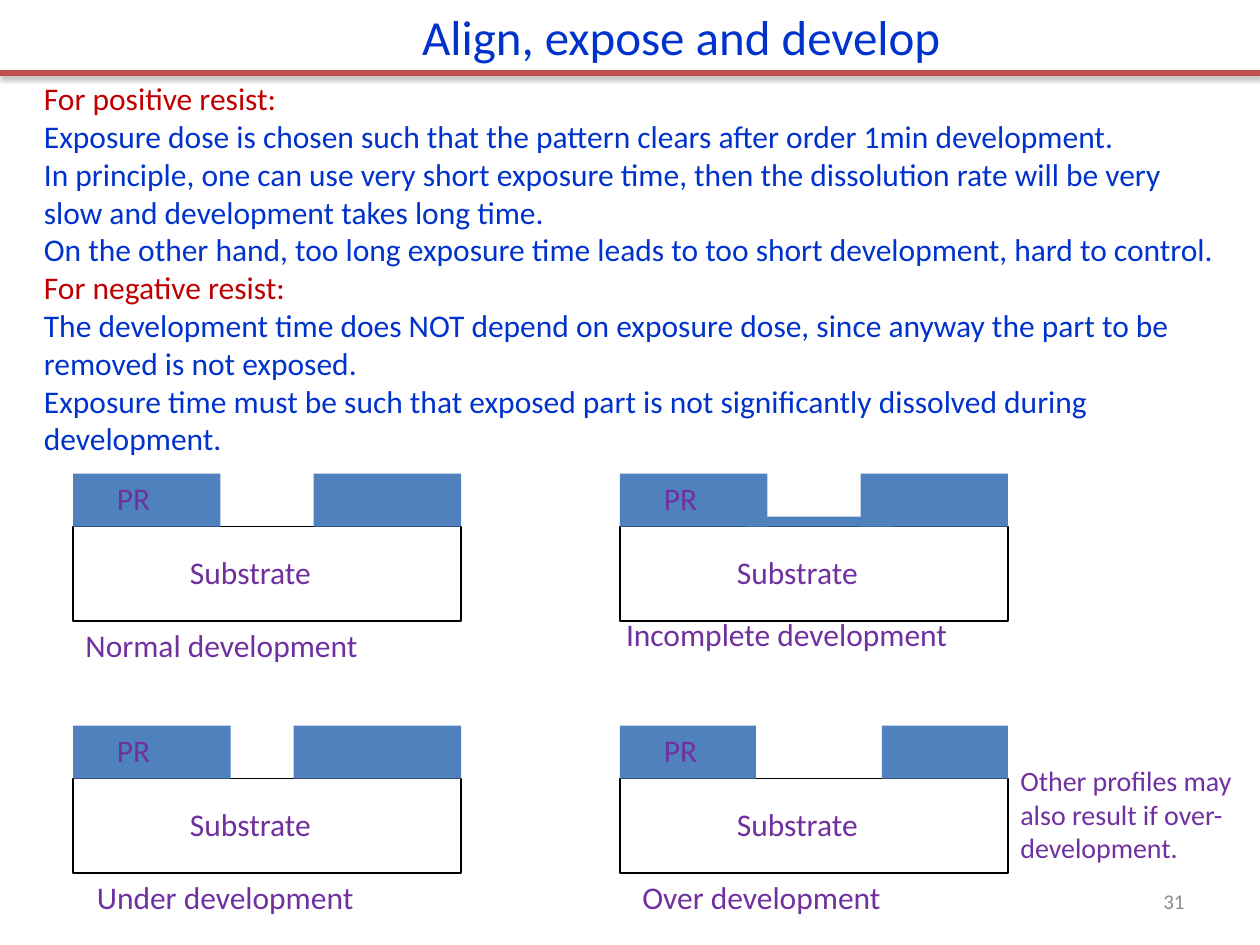
from lxml import etree
from pptx import Presentation, util as u
from pptx.dml.color import RGBColor
from pptx.enum import shapes, text
from pptx.oxml.ns import qn

BLUE = RGBColor(0x00, 0x33, 0xCC)
RED = RGBColor(0xC0, 0x00, 0x00)
PURPLE = RGBColor(0x70, 0x30, 0xA0)
GRAY = RGBColor(0x8C, 0x8C, 0x8C)
RESIST = RGBColor(0x4F, 0x81, 0xBD)
RULE = RGBColor(0xC0, 0x50, 0x4D)
WHITE = RGBColor(0xFF, 0xFF, 0xFF)
BLACK = RGBColor(0, 0, 0)

# Content
TITLE = "Align, expose and develop"
NOTES = [
    ("For positive resist:", RED),
    ("Exposure dose is chosen such that the pattern clears after order 1min development.", BLUE),
    ("In principle, one can use very short exposure time, then the dissolution rate "
     "will be very slow and development takes long time.", BLUE),
    ("On the other hand, too long exposure time leads to too short development, "
     "hard to control.", BLUE),
    ("For negative resist:", RED),
    ("The development time does NOT depend on exposure dose, since anyway the part "
     "to be removed is not exposed.", BLUE),
    ("Exposure time must be such that exposed part is not significantly dissolved "
     "during development.", BLUE),
]
REMARK = "Other profiles may also result if over-development."
PAGE = "31"

# Panels in reading order; lengths in inches from the panel's top left corner.
# caption: left, top, width; residue: left, width; opening: outline cut from the resist
PANELS = [
    dict(name="Normal development", caption=(0, 1.16, 2.62), resist=(1.17, 1.17)),
    dict(name="Incomplete development", caption=(-0.05, 1.07, 2.79), resist=(1.17, 1.17),
         residue=(1, 1.17)),
    dict(name="Under development", caption=(0.09, 1.16, 2.45), resist=(1.25, 1.33),
         opening=[(1.17, 0), (1.2, 0.42), (1.8, 0.42), (1.84, 0)]),
    dict(name="Over development", caption=(0.08, 1.16, 2.29), resist=(1.08, 1),
         opening=[(0.83, 0), (1.35, 0.42), (1.81, 0.42), (2.33, 0)]),
]

# Panel grid
LEFT, TOP, COLUMN_STEP, ROW_STEP = 0.58, 3.76, 4.34, 2
PANEL_W, RESIST_H, SUBSTRATE_H, RESIDUE_H = 3.08, 0.42, 0.75, 0.08

prs = Presentation()
prs.slide_width, prs.slide_height = u.Inches(10), u.Inches(7.5)
slide = prs.slides.add_slide(prs.slide_layouts[5])


def write(paragraphs, left, top, width, height, holder=None, size=18, color=PURPLE,
          align=text.PP_ALIGN.LEFT, anchor=text.MSO_ANCHOR.TOP, wrap=True):
    """Put text, or a list of (text, colour) paragraphs, in a box or placeholder."""
    box = [u.Inches(v) for v in (left, top, width, height)]
    holder = holder or slide.shapes.add_textbox(*box)
    holder.left, holder.top, holder.width, holder.height = box
    frame = holder.text_frame
    frame.word_wrap, frame.vertical_anchor = wrap, anchor
    frame.auto_size = text.MSO_AUTO_SIZE.NONE
    if isinstance(paragraphs, str):
        paragraphs = [(paragraphs, color)]
    for i, (words, ink) in enumerate(paragraphs):
        paragraph = frame.add_paragraph() if i else frame.paragraphs[0]
        paragraph.alignment = align
        run = paragraph.add_run()
        run.text = words
        run.font.name, run.font.size = "Calibri", u.Pt(size)
        run.font.color.rgb = ink


def paint(shape, fill, line=None):
    shape.shadow.inherit = False
    shape.fill.solid()
    shape.fill.fore_color.rgb = fill
    if line is None:
        shape.line.fill.background()
    else:
        shape.line.color.rgb = line
        shape.line.width = u.Pt(0.75)


def layer(left, top, width, height, fill, line=None):
    box = [u.Inches(v) for v in (left, top, width, height)]
    paint(slide.shapes.add_shape(shapes.MSO_SHAPE.RECTANGLE, *box), fill, line)


def draw_panel(x, y, panel):
    left_w, right_w = panel["resist"]
    base = y + RESIST_H
    layer(x, base, PANEL_W, SUBSTRATE_H, WHITE, BLACK)
    layer(x, y, left_w, RESIST_H, RESIST)
    layer(x + PANEL_W - right_w, y, right_w, RESIST_H, RESIST)
    if "residue" in panel:
        offset, width = panel["residue"]
        layer(x + offset, base - RESIDUE_H, width, RESIDUE_H, RESIST)
    if "opening" in panel:
        start, *rest = [(x + dx, y + dy) for dx, dy in panel["opening"]]
        outline = slide.shapes.build_freeform(*start, scale=u.Inches(1))
        outline.add_line_segments(rest, close=True)
        paint(outline.convert_to_shape(), WHITE)
    write("PR", x + 0.25, y - 0.01, 0.75, 0.4)
    write("Substrate", x + 0.83, base + 0.16, 2.17, 0.4)
    dx, dy, width = panel["caption"]
    write(panel["name"], x + dx, y + dy, width, 0.4)


# Cross-section panels
for i, panel in enumerate(PANELS):
    row, column = divmod(i, 2)
    draw_panel(LEFT + column * COLUMN_STEP, TOP + row * ROW_STEP, panel)

# Title and the shadowed rule under it
write(TITLE, 3.25, 0, 4.46, 0.57, holder=slide.shapes.title, size=28, color=BLUE, wrap=False)
rule = slide.shapes.add_connector(shapes.MSO_CONNECTOR.STRAIGHT,
                                  0, u.Inches(0.58), prs.slide_width, u.Inches(0.58))
rule.line.color.rgb, rule.line.width = RULE, u.Pt(3)
effects = etree.SubElement(rule._element.spPr, qn("a:effectLst"))
shadow = etree.SubElement(effects, qn("a:outerShdw"), blurRad=str(u.Pt(3.1)),
                          dist=str(u.Pt(1.6)), dir="5400000", rotWithShape="0")
shade = etree.SubElement(shadow, qn("a:srgbClr"), val="000000")
etree.SubElement(shade, qn("a:alpha"), val="38000")

# Notes, remark and page number
write(NOTES, 0.25, 0.58, 9.58, 3.13)
write(PAGE, 7.17, 6.95, 2.33, 0.4, size=12, color=GRAY,
      align=text.PP_ALIGN.RIGHT, anchor=text.MSO_ANCHOR.MIDDLE)
write(REMARK, 8, 6.01, 1.92, 0.91, size=16)

prs.save("out.pptx")
